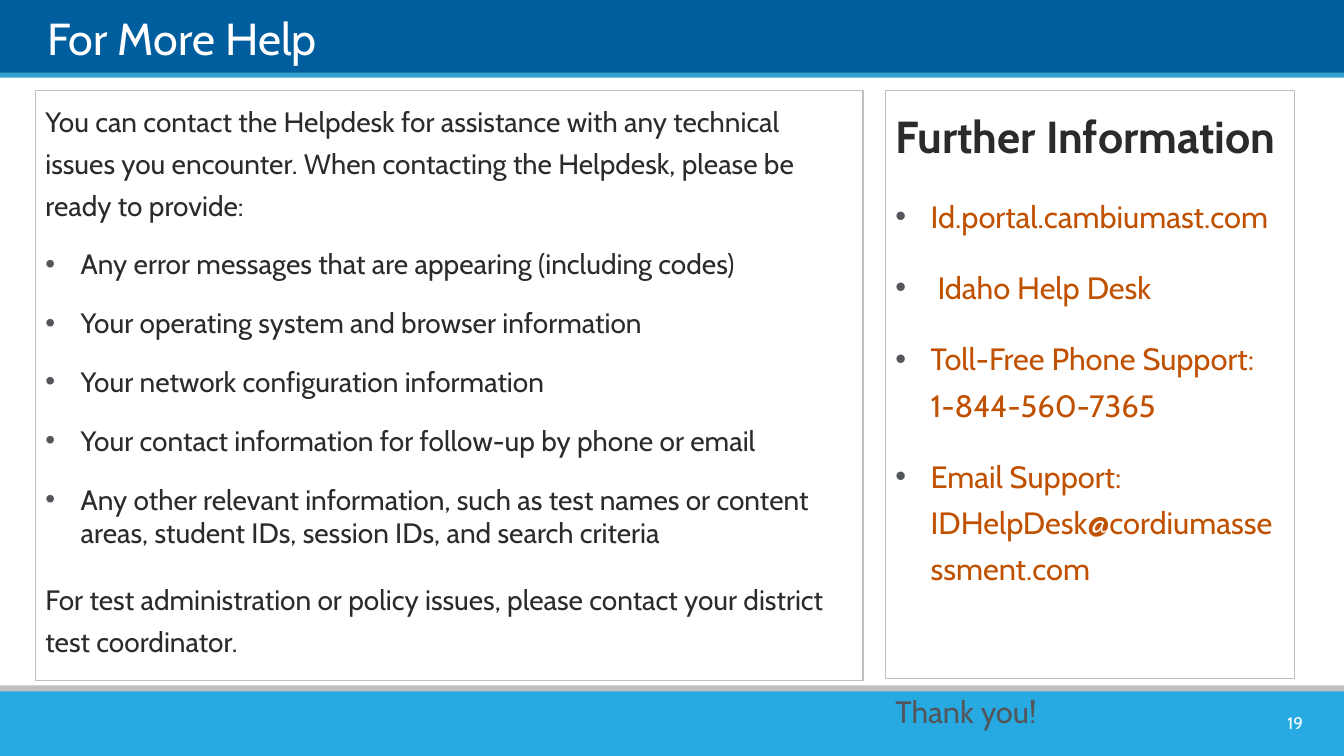
from lxml.etree import SubElement
from pptx import Presentation
from pptx.dml.color import RGBColor
from pptx.enum.shapes import MSO_SHAPE as SHAPE
from pptx.enum.text import MSO_ANCHOR as ANCHOR, MSO_AUTO_SIZE as AUTO, PP_ALIGN as ALIGN
from pptx.oxml.ns import qn
from pptx.util import Inches, Pt

FONT = "Cabin"
DARK, GRAY, ORANGE, WHITE, BORDER = "2A2B2D", "53565A", "C05100", "FFFFFF", "BFBFBF"

TITLE = "For More Help"
PAGE = "19"
BARS = [
    (-0.01, 0.75, "005E9E"),
    (0.72, 0.05, "35A0CE"),
    (6.8, 0.14, BORDER),
    (6.86, 0.64, "27AAE1"),
]

# text, bulleted, size, color, bold, line spacing, space before
HELP = [
    ("You can contact the Helpdesk for assistance with any technical issues you encounter. "
     "When contacting the Helpdesk, please be ready to provide:", False, 20, DARK, False, 1.25, 0),
    *[(item, True, 20, DARK, False, 1, 18) for item in (
        "Any error messages that are appearing (including codes)",
        "Your operating system and browser information",
        "Your network configuration information",
        "Your contact information for follow-up by phone or email",
        "Any other relevant information, such as test names or content areas, "
        "student IDs, session IDs, and search criteria",
    )],
    ("For test administration or policy issues, please contact your district test coordinator.",
     False, 20, DARK, False, 1.25, 18),
]
CONTACTS = [
    ("Further Information", False, 32, DARK, True, 1.25, 0),
    *[(item, True, 22, ORANGE, False, 1.25, 18) for item in (
        "Id.portal.cambiumast.com",
        " Idaho Help Desk",
        "Toll-Free Phone Support: 1-844-560-7365",
        "Email Support: IDHelpDesk@cordiumassessment.com",
    )],
    ("Thank you!", False, 22, GRAY, False, 1.25, 69),
]
PANELS = [
    ((0.35, 0.9, 8.21, 5.85), HELP),
    ((8.78, 0.9, 4.06, 5.83), CONTACTS),
]


def rgb(value):
    return RGBColor.from_string(value)


def place(shape, box):
    shape.left, shape.top, shape.width, shape.height = map(Inches, box)


def style(p, size, color, bold=False):
    for r in p.runs:
        r.font.name = FONT
        r.font.size = Pt(size)
        r.font.bold = bold
        r.font.color.rgb = rgb(color)


def set_bullet(p, bulleted):
    pPr = p._p.get_or_add_pPr()
    indent = Inches(0.35) if bulleted else 0
    pPr.set("marL", str(indent))
    pPr.set("indent", str(-indent))
    if bulleted:
        SubElement(SubElement(pPr, qn("a:buClr")), qn("a:srgbClr")).set("val", GRAY)
        SubElement(pPr, qn("a:buFont")).set("typeface", "Arial")
        SubElement(pPr, qn("a:buChar")).set("char", "•")
    else:
        SubElement(pPr, qn("a:buNone"))


def fill_panel(panel, box, lines):
    place(panel, box)
    panel.line.color.rgb = rgb(BORDER)
    panel.line.width = Pt(1)
    tf = panel.text_frame
    tf.word_wrap = True
    tf.auto_size = AUTO.NONE
    tf.vertical_anchor = ANCHOR.TOP
    for i, (text, bulleted, size, color, bold, spacing, before) in enumerate(lines):
        p = tf.add_paragraph() if i else tf.paragraphs[0]
        p.text = text
        set_bullet(p, bulleted)
        p.line_spacing = spacing
        p.space_before = Pt(before)
        style(p, size, color, bold)


prs = Presentation()
prs.slide_width, prs.slide_height = Inches(13.33), Inches(7.5)
s = prs.slides.add_slide(prs.slide_layouts.get_by_name("Two Content"))
title, *bodies = s.placeholders

for top, height, color in BARS:
    bar = s.shapes.add_shape(SHAPE.RECTANGLE, 0, Inches(top), prs.slide_width, Inches(height))
    bar.shadow.inherit = False
    bar.fill.solid()
    bar.fill.fore_color.rgb = rgb(color)
    bar.line.fill.background()
    s.shapes._spTree.remove(bar._element)
    title._element.addprevious(bar._element)

place(title, (0.47, 0.07, 12.43, 0.57))
tf = title.text_frame
tf.text = TITLE
tf.auto_size = AUTO.NONE
tf.vertical_anchor = ANCHOR.BOTTOM
tf.margin_left = tf.margin_right = tf.margin_top = tf.margin_bottom = 0
tf.paragraphs[0].alignment = ALIGN.LEFT
style(tf.paragraphs[0], 32, WHITE)

for body, (box, lines) in zip(bodies, PANELS):
    fill_panel(body, box, lines)

number = s.shapes.add_textbox(*map(Inches, (12.34, 7.02, 0.68, 0.3)))
tf = number.text_frame
tf.text = PAGE
tf.word_wrap = True
tf.vertical_anchor = ANCHOR.MIDDLE
tf.paragraphs[0].alignment = ALIGN.RIGHT
style(tf.paragraphs[0], 12, WHITE)

prs.save("out.pptx")
